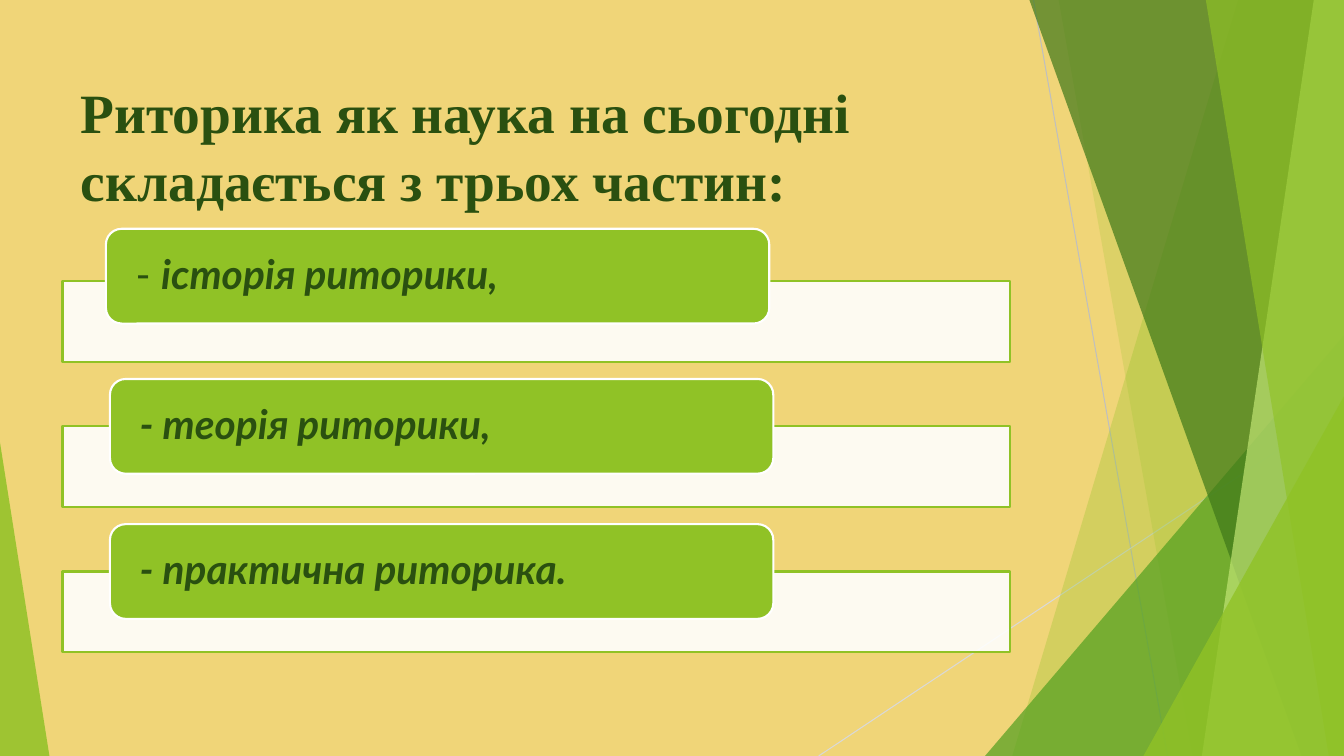
from dataclasses import dataclass

import pptx
import pptx.dml.color
import pptx.enum.shapes
import pptx.enum.text
import pptx.oxml
import pptx.oxml.ns
import pptx.util
from pptx.dml.color import RGBColor
from pptx.util import Inches

WIDTH, HEIGHT = 13.33, 7.5
SAND = RGBColor(0xF0, 0xD5, 0x78)
LIME = RGBColor(0x90, 0xC2, 0x26)
PALE_LIME = RGBColor(0xC0, 0xE4, 0x74)
GREEN = RGBColor(0x54, 0xA0, 0x21)
DARK_GREEN = RGBColor(0x3F, 0x78, 0x19)
TEXT_GREEN = RGBColor(0x2A, 0x50, 0x10)
WHITE = RGBColor(0xFF, 0xFF, 0xFF)
GREY = RGBColor(0xBF, 0xBF, 0xBF)
LIGHT_GREY = RGBColor(0xD9, 0xD9, 0xD9)


@dataclass
class Ray:
    start: tuple[float, float]
    end: tuple[float, float]
    color: RGBColor


@dataclass
class Slab:
    """A band from a slanted left edge to the right side of the slide."""
    top_x: float
    bottom_x: float
    color: RGBColor
    opacity: int


@dataclass
class Wedge:
    """A right triangle standing on the bottom of the slide."""
    left: float
    top: float
    width: float
    apex: float
    color: RGBColor
    opacity: int


@dataclass
class Part:
    label_left: float
    plain: str
    emphasis: str


RAYS = [
    Ray((10.25, 0), (11.58, HEIGHT), GREY),
    Ray((WIDTH, 4.03), (8.12, HEIGHT), LIGHT_GREY),
]
FACETS = [
    Slab(12.28, 10.04, LIME, 30),
    Slab(10.5, 11.83, LIME, 20),
    Wedge(9.77, 3.33, 3.56, 1, GREEN, 72),
    Slab(10.21, 12.91, DARK_GREEN, 70),
    Slab(13.03, 11.92, PALE_LIME, 70),
    Slab(11.96, 13.18, LIME, 65),
    Wedge(11.34, 3.93, 1.99, 1, LIME, 80),
    Wedge(0, 4.39, 0.49, 0, LIME, 85),
]
PARTS = [
    Part(1.05, "- ", "історія риторики,"),
    Part(1.09, "", "- теорія риторики,"),
    Part(1.09, "", "- практична риторика."),
]
FIRST_BAR_TOP, BAR_PITCH, LABEL_RISE = 2.79, 1.44, 0.47


def paint(shape, color: RGBColor, opacity: int = 100, line: RGBColor | None = None) -> None:
    shape.shadow.inherit = False
    shape.fill.solid()
    shape.fill.fore_color.rgb = color
    if opacity < 100:
        color_element = shape.fill._xPr.find(".//" + pptx.oxml.ns.qn("a:srgbClr"))
        alpha = pptx.oxml.parse_xml(
            f'<a:alpha {pptx.oxml.ns.nsdecls("a")} val="{opacity * 1000}"/>')
        color_element.append(alpha)
    if line is None:
        shape.line.fill.background()
    else:
        shape.line.color.rgb = line
        shape.line.width = pptx.util.Pt(1.5)


def add_preset(slide, kind, left: float, top: float, width: float, height: float):
    return slide.shapes.add_shape(
        kind, Inches(left), Inches(top), Inches(width), Inches(height))


def add_ray(slide, ray: Ray) -> None:
    connector = slide.shapes.add_connector(
        pptx.enum.shapes.MSO_CONNECTOR.STRAIGHT,
        *map(Inches, ray.start), *map(Inches, ray.end))
    connector.line.color.rgb = ray.color
    connector.line.width = pptx.util.Pt(0.75)
    connector._element.spPr.append(
        pptx.oxml.parse_xml(f'<a:effectLst {pptx.oxml.ns.nsdecls("a")}/>'))


def add_facet(slide, facet: Slab | Wedge) -> None:
    if isinstance(facet, Slab):
        builder = slide.shapes.build_freeform(Inches(facet.top_x), 0)
        corners = [(WIDTH, 0), (WIDTH, HEIGHT), (facet.bottom_x, HEIGHT)]
        builder.add_line_segments([(Inches(x), Inches(y)) for x, y in corners])
        shape = builder.convert_to_shape()
    else:
        shape = add_preset(slide, pptx.enum.shapes.MSO_SHAPE.ISOSCELES_TRIANGLE,
                           facet.left, facet.top, facet.width, HEIGHT - facet.top)
        shape.adjustments[0] = facet.apex
    paint(shape, facet.color, facet.opacity)


def format_title(title) -> None:
    title.left, title.top = Inches(0.7), Inches(0.65)
    title.width, title.height = Inches(9.4), Inches(1.44)
    frame = title.text_frame
    frame.text = "Риторика як наука на сьогодні складається з трьох частин:"
    frame.word_wrap = True
    frame.auto_size = pptx.enum.text.MSO_AUTO_SIZE.NONE
    frame.vertical_anchor = pptx.enum.text.MSO_ANCHOR.TOP
    frame.margin_top = Inches(0.1)
    paragraph = frame.paragraphs[0]
    paragraph.alignment = pptx.enum.text.PP_ALIGN.LEFT
    paragraph.line_spacing = 1.03
    font = paragraph.runs[0].font
    font.name, font.size, font.bold = "Times New Roman", pptx.util.Pt(39.6), True
    font.color.rgb = TEXT_GREEN


def add_part(slide, part: Part, bar_top: float) -> None:
    bar = add_preset(slide, pptx.enum.shapes.MSO_SHAPE.RECTANGLE, 0.62, bar_top, 9.4, 0.8)
    paint(bar, WHITE, 90, LIME)
    label = add_preset(slide, pptx.enum.shapes.MSO_SHAPE.ROUNDED_RECTANGLE,
                       part.label_left, bar_top - LABEL_RISE + (-0.05 if part.plain else 0),
                       6.58, 0.94)
    paint(label, LIME, line=WHITE)
    frame = label.text_frame
    frame.word_wrap = True
    frame.vertical_anchor = pptx.enum.text.MSO_ANCHOR.MIDDLE
    frame.margin_left = frame.margin_right = Inches(0.25)
    frame.margin_top = frame.margin_bottom = 0
    paragraph = frame.paragraphs[0]
    paragraph.alignment = pptx.enum.text.PP_ALIGN.LEFT
    paragraph.line_spacing = 0.9
    for text, emphasized in ((part.plain, False), (part.emphasis, True)):
        if text:
            run = paragraph.add_run()
            run.text = text
            run.font.name, run.font.size = "Lato", pptx.util.Pt(29)
            run.font.bold = run.font.italic = emphasized
            run.font.color.rgb = TEXT_GREEN


def main() -> None:
    presentation = pptx.Presentation()
    presentation.slide_width = Inches(WIDTH)
    presentation.slide_height = Inches(HEIGHT)
    slide = presentation.slides.add_slide(presentation.slide_layouts[5])
    slide.background.fill.solid()
    slide.background.fill.fore_color.rgb = SAND
    for ray in RAYS:
        add_ray(slide, ray)
    for facet in FACETS:
        add_facet(slide, facet)
    format_title(slide.shapes.title)
    for index, part in enumerate(PARTS):
        add_part(slide, part, FIRST_BAR_TOP + index * BAR_PITCH)
    presentation.save("out.pptx")


if __name__ == "__main__":
    main()
